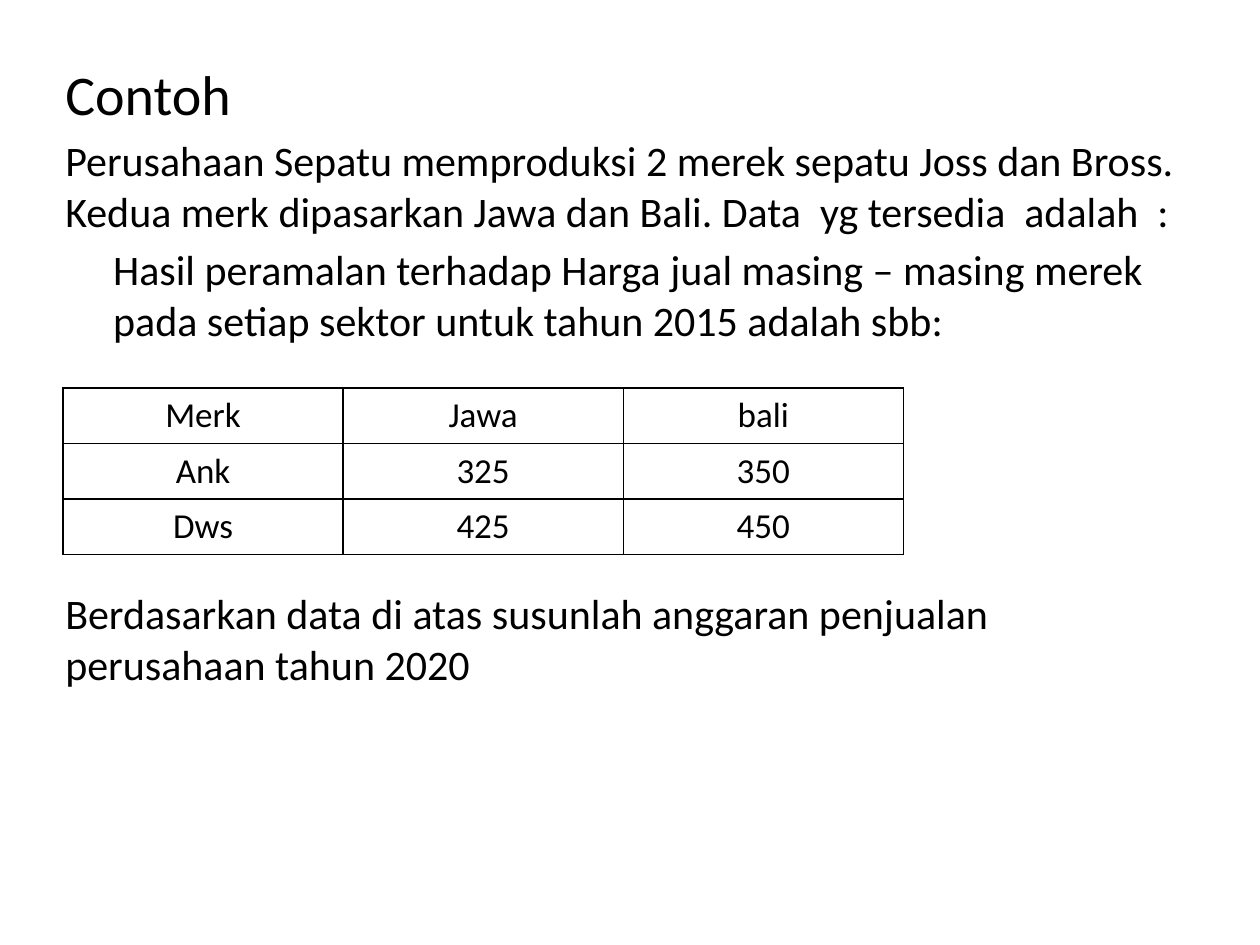
from pptx import Presentation
from pptx.dml.color import RGBColor
from pptx.enum.text import PP_ALIGN
from pptx.oxml import parse_xml
from pptx.oxml.ns import nsdecls
from pptx.util import Inches, Pt

CENTER = PP_ALIGN.CENTER
FONT = "Calibri"
COLORS = {"text": "000000", "border": "000000"}
PARAGRAPHS = [
    ("Contoh", 32, 0, 0),
    ("Perusahaan Sepatu memproduksi 2 merek sepatu Joss dan Bross. "
     "Kedua merk dipasarkan Jawa dan Bali. Data  yg tersedia  adalah  :", 24, 4.8, 0),
    ("Hasil peramalan terhadap Harga jual masing – masing merek "
     "pada setiap sektor untuk tahun 2015 adalah sbb:", 24, 4.8, 0.38),
    ("Berdasarkan data di atas susunlah anggaran penjualan "
     "perusahaan tahun 2020", 24, 139, 0),
]
PRICES = [
    ("Merk", "Jawa", "bali"),
    ("Ank", "325", "350"),
    ("Dws", "425", "450"),
]


def style_font(paragraph, size):
    """Set the shared typeface and colour at the given size."""
    paragraph.font.name = FONT
    paragraph.font.size = Pt(size)
    paragraph.font.color.rgb = RGBColor.from_string(COLORS["text"])


def add_body(slide):
    """Add the problem text, leaving room for the price table."""
    box = slide.shapes.add_textbox(Inches(0.42), Inches(0.42), Inches(9), Inches(6.03))
    frame = box.text_frame
    frame.word_wrap = True
    for index, (text, size, space_before, indent) in enumerate(PARAGRAPHS):
        paragraph = frame.add_paragraph() if index else frame.paragraphs[0]
        paragraph.text = text
        if space_before:
            paragraph.space_before = Pt(space_before)
        if indent:
            paragraph._p.get_or_add_pPr().set("marL", str(Inches(indent)))
        style_font(paragraph, size)


def add_borders(cell):
    """Draw a thin line on all four sides of a cell."""
    properties = cell._tc.get_or_add_tcPr()
    for position, side in enumerate(("lnL", "lnR", "lnT", "lnB")):
        properties.insert(position, parse_xml(
            f'<a:{side} {nsdecls("a")} w="{Pt(1)}"><a:solidFill>'
            f'<a:srgbClr val="{COLORS["border"]}"/></a:solidFill></a:{side}>'))


def add_price_table(slide):
    """Add the table of forecast prices by brand and region."""
    row_height = Inches(0.44)
    table = slide.shapes.add_table(
        len(PRICES), len(PRICES[0]), Inches(0.5), Inches(3.08),
        Inches(6.67), row_height * len(PRICES)).table
    table.first_row = False
    table.horz_banding = False
    for row, values in enumerate(PRICES):
        table.rows[row].height = row_height
        for column, value in enumerate(values):
            cell = table.cell(row, column)
            cell.text = value
            cell.fill.background()
            add_borders(cell)
            paragraph = cell.text_frame.paragraphs[0]
            paragraph.alignment = CENTER
            style_font(paragraph, 20)


def main():
    """Build and save the slide."""
    presentation = Presentation()
    presentation.slide_width = Inches(10)
    presentation.slide_height = Inches(7.5)
    slide = presentation.slides.add_slide(presentation.slide_layouts[6])
    add_body(slide)
    add_price_table(slide)
    presentation.save("out.pptx")


if __name__ == "__main__":
    main()
